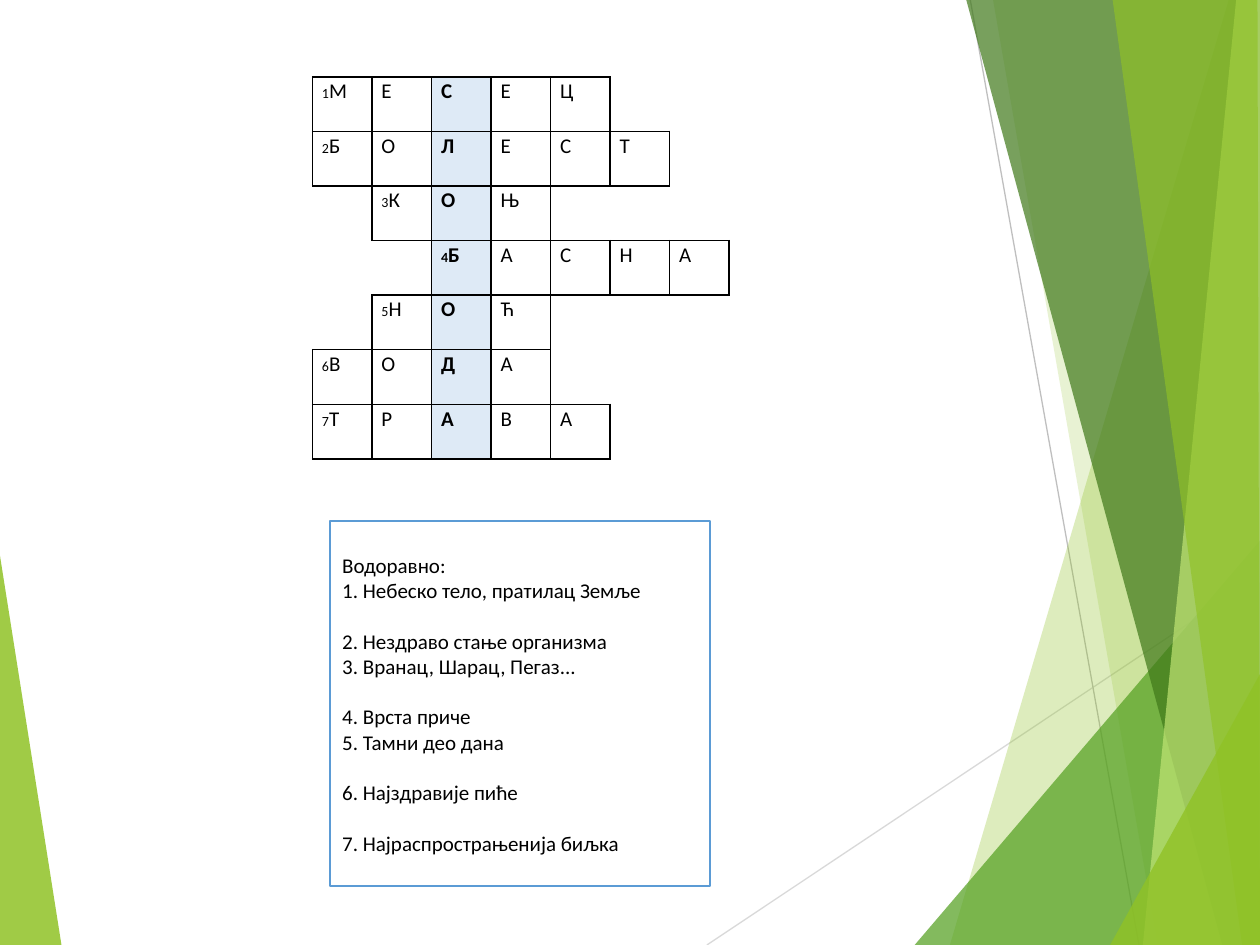
from lxml.etree import SubElement
from pptx import Presentation
from pptx.dml.color import RGBColor
from pptx.enum.shapes import MSO_CONNECTOR, MSO_SHAPE
from pptx.enum.text import MSO_ANCHOR, PP_ALIGN
from pptx.oxml import parse_xml
from pptx.oxml.ns import nsdecls, qn
from pptx.util import Cm, Pt

BLACK = RGBColor(0x00, 0x00, 0x00)
WHITE = RGBColor(0xFF, 0xFF, 0xFF)
PALE_BLUE = RGBColor(0xDE, 0xEA, 0xF6)
BLUE = RGBColor(0x5B, 0x9B, 0xD5)
LIME = RGBColor(0x90, 0xC2, 0x26)
GREEN = RGBColor(0x54, 0xA0, 0x21)
DARK_GREEN = RGBColor(0x3F, 0x78, 0x19)
LIGHT_LIME = RGBColor(0xC0, 0xE4, 0x74)
GREY = RGBColor(0xBF, 0xBF, 0xBF)
LIGHT_GREY = RGBColor(0xD9, 0xD9, 0xD9)

FONT = "Calibri"
WIDTH, HEIGHT = 25.4, 19.05

WORDS = [
    (0, "МЕСЕЦ"),
    (0, "БОЛЕСТ"),
    (1, "КОЊ"),
    (2, "БАСНА"),
    (1, "НОЋ"),
    (0, "ВОДА"),
    (0, "ТРАВА"),
]
SOLUTION_COLUMN = 2
COLUMNS = 7
CELL_WIDTH, CELL_HEIGHT = 1.2, 1.1

CLUES = [
    ("Водоравно:", 0),
    ("1. Небеско тело, пратилац Земље", 14.5),
    ("2. Нездраво стање организма", 0),
    ("3. Вранац, Шарац, Пегаз...", 14.5),
    ("4. Врста приче", 0),
    ("5. Тамни део дана", 14.5),
    ("6. Најздравије пиће", 14.5),
    ("7. Најраспрострањенија биљка", 0),
]

LEFT_SHARD = ([(0, 11.2), (1.24, HEIGHT), (0, HEIGHT)], LIME, 85)
RAYS = [
    ((14.25, HEIGHT), (WIDTH, 11.61), LIGHT_GREY),
    ((19.56, 0), (22.96, HEIGHT), GREY),
]
RIGHT_SHARDS = [
    ([(24.77, 0), (19.15, HEIGHT), (WIDTH, HEIGHT), (WIDTH, 0)], LIME, 30),
    ([(20.02, 0), (23.34, HEIGHT), (WIDTH, HEIGHT), (WIDTH, 0)], LIME, 20),
    ([(18.44, HEIGHT), (WIDTH, 10.9), (WIDTH, HEIGHT)], GREEN, 72),
    ([(19.48, 0), (24.64, HEIGHT), (WIDTH, HEIGHT), (WIDTH, 0)], DARK_GREEN, 70),
    ([(24.92, 0), (23.04, HEIGHT), (WIDTH, HEIGHT), (WIDTH, 0)], LIGHT_LIME, 70),
    ([(22.43, 0), (25.04, HEIGHT), (WIDTH, HEIGHT), (25.35, 0)], LIME, 65),
    ([(22.38, HEIGHT), (WIDTH, 13.59), (WIDTH, HEIGHT)], LIME, 80),
]


def add_shard(page, points, color, opacity):
    corners = [(Cm(x), Cm(y)) for x, y in points]
    builder = page.shapes.build_freeform(*corners[0])
    builder.add_line_segments(corners[1:], close=True)
    shard = builder.convert_to_shape()
    shard.shadow.inherit = False
    shard.fill.solid()
    shard.fill.fore_color.rgb = color
    shard.line.fill.background()
    color_node = next(shard._element.spPr.iter(qn("a:srgbClr")))
    SubElement(color_node, qn("a:alpha"), val=str(opacity * 1000))


def add_ray(page, start, end, color):
    ends = [Cm(value) for value in start + end]
    ray = page.shapes.add_connector(MSO_CONNECTOR.STRAIGHT, *ends)
    ray.line.color.rgb = color
    ray.line.width = Pt(0.75)
    SubElement(ray._element.spPr, qn("a:effectLst"))


def set_borders(cell, visible_sides):
    properties = cell._tc.get_or_add_tcPr()
    for index, side in enumerate("LRTB"):
        if side in visible_sides:
            paint = f'<a:solidFill><a:srgbClr val="{BLACK}"/></a:solidFill>'
        else:
            paint = "<a:noFill/>"
        border = f'<a:ln{side} {nsdecls("a")} w="{Pt(1)}">{paint}</a:ln{side}>'
        properties.insert(index, parse_xml(border))


def fill_cell(cell, letter, number, in_solution):
    para = cell.text_frame.paragraphs[0]
    para.line_spacing = 1.07
    para.font.name = FONT
    para.font.size = Pt(12)
    para.font.bold = in_solution
    para.font.color.rgb = BLACK
    if number:
        span = para.add_run()
        span.text = str(number)
        span.font.size = Pt(8)
    para.add_run().text = letter


def add_crossword(page):
    rows = len(WORDS)
    table = page.shapes.add_table(
        rows, COLUMNS, Cm(6.3), Cm(1.55),
        Cm(COLUMNS * CELL_WIDTH), Cm(rows * CELL_HEIGHT),
    ).table
    table.first_row = False
    table.horz_banding = False
    for column in table.columns:
        column.width = Cm(CELL_WIDTH)
    letters = {
        (row, start + place): letter
        for row, (start, word) in enumerate(WORDS)
        for place, letter in enumerate(word)
    }
    for row, (start, word) in enumerate(WORDS):
        table.rows[row].height = Cm(CELL_HEIGHT)
        for column in range(COLUMNS):
            cell = table.cell(row, column)
            cell.margin_left = cell.margin_right = Cm(0.19)
            cell.margin_top = cell.margin_bottom = 0
            in_solution = column == SOLUTION_COLUMN
            if in_solution:
                cell.fill.solid()
                cell.fill.fore_color.rgb = PALE_BLUE
            else:
                cell.fill.background()
            here = (row, column)
            neighbours = {
                "L": (row, column - 1), "R": (row, column + 1),
                "T": (row - 1, column), "B": (row + 1, column),
            }
            set_borders(cell, [
                side for side, other in neighbours.items()
                if here in letters or other in letters
            ])
            if here in letters:
                number = row + 1 if column == start else None
                fill_cell(cell, letters[here], number, in_solution)


def add_clues(page):
    box = page.shapes.add_shape(
        MSO_SHAPE.RECTANGLE, Cm(6.65), Cm(10.51), Cm(7.67), Cm(7.36))
    box.shadow.inherit = False
    box.fill.solid()
    box.fill.fore_color.rgb = WHITE
    box.line.color.rgb = BLUE
    box.line.width = Pt(1)
    frame = box.text_frame
    frame.word_wrap = True
    frame.vertical_anchor = MSO_ANCHOR.MIDDLE
    for index, (clue, gap) in enumerate(CLUES):
        para = frame.add_paragraph() if index else frame.paragraphs[0]
        para.text = clue
        para.alignment = PP_ALIGN.LEFT
        para.space_after = Pt(gap)
        para.font.name = FONT
        para.font.size = Pt(12)
        para.font.color.rgb = BLACK


def main():
    deck = Presentation()
    deck.slide_width, deck.slide_height = Cm(WIDTH), Cm(HEIGHT)
    page = deck.slides.add_slide(deck.slide_layouts[6])
    add_shard(page, *LEFT_SHARD)
    for ray in RAYS:
        add_ray(page, *ray)
    for shard in RIGHT_SHARDS:
        add_shard(page, *shard)
    add_crossword(page)
    add_clues(page)
    deck.save("out.pptx")


if __name__ == "__main__":
    main()
